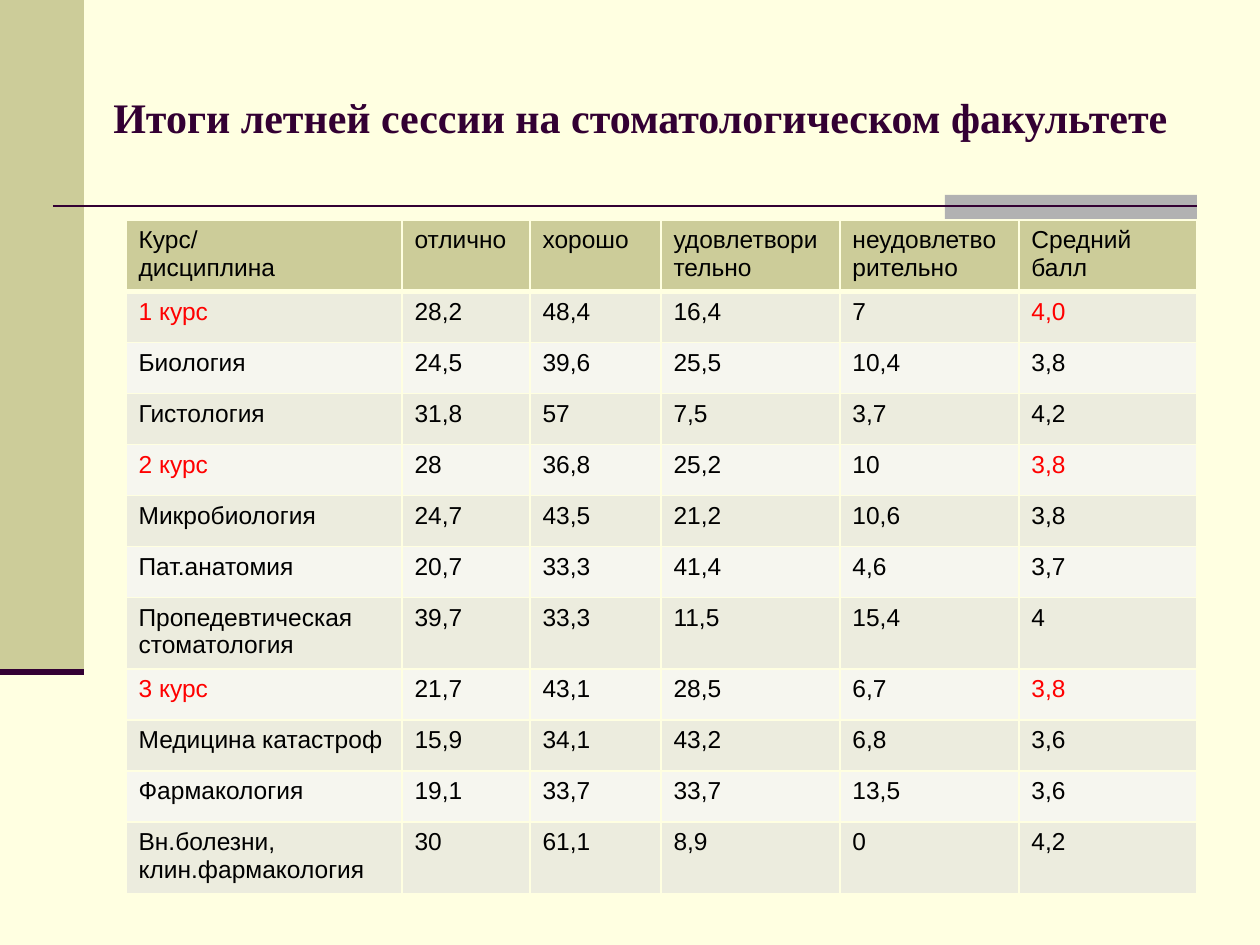
from dataclasses import dataclass

from lxml.etree import SubElement
from pptx import Presentation
from pptx.dml.color import RGBColor
from pptx.enum.shapes import MSO_CONNECTOR, MSO_SHAPE
from pptx.enum.text import MSO_ANCHOR, PP_ALIGN
from pptx.oxml.ns import qn
from pptx.util import Pt

SCALE = 914400 / 126  # EMU in one px


@dataclass(frozen=True)
class Theme:
    page: str = "FFFFE1"
    olive: str = "CCCC99"
    grey: str = "B2B2B2"
    plum: str = "330033"
    ink: str = "000000"
    red: str = "FF0000"
    bands: tuple = ("ECECDE", "F6F6EF")
    serif: str = "Times New Roman"
    sans: str = "Arial"
    title: int = 24
    body: int = 14


THEME = Theme()
TITLE = "Итоги летней сессии на стоматологическом факультете"
COLS = (276, 128, 131, 179, 179, 178)
ROW = 51
HEAD = ("Курс/\nдисциплина", "отлично", "хорошо", "удовлетворительно",
        "неудовлетворительно", "Средний балл")
DATA = (
    ("1 курс", "28,2", "48,4", "16,4", "7", "4,0"),
    ("Биология", "24,5", "39,6", "25,5", "10,4", "3,8"),
    ("Гистология", "31,8", "57", "7,5", "3,7", "4,2"),
    ("2 курс", "28", "36,8", "25,2", "10", "3,8"),
    ("Микробиология", "24,7", "43,5", "21,2", "10,6", "3,8"),
    ("Пат.анатомия", "20,7", "33,3", "41,4", "4,6", "3,7"),
    ("Пропедевтическая стоматология", "39,7", "33,3", "11,5", "15,4", "4"),
    ("3 курс", "21,7", "43,1", "28,5", "6,7", "3,8"),
    ("Медицина катастроф", "15,9", "34,1", "43,2", "6,8", "3,6"),
    ("Фармакология", "19,1", "33,7", "33,7", "13,5", "3,6"),
    ("Вн.болезни, клин.фармакология", "30", "61,1", "8,9", "0", "4,2"),
)


def px(n):
    return round(n * SCALE)


def rgb(tone):
    return RGBColor.from_string(tone)


def add_run(para, text, size, face, tone, bold=False):
    run = para.add_run()
    run.text = text
    run.font.size = Pt(size)
    run.font.name = face
    run.font.bold = bold
    run.font.color.rgb = rgb(tone)


def add_block(slide, box, tone):
    shape = slide.shapes.add_shape(MSO_SHAPE.RECTANGLE, *map(px, box))
    shape.shadow.inherit = False
    shape.fill.solid()
    shape.fill.fore_color.rgb = rgb(tone)
    shape.line.fill.background()


def add_rule(slide, left, top, width, weight):
    line = slide.shapes.add_connector(
        MSO_CONNECTOR.STRAIGHT, px(left), px(top), px(left + width), px(top))
    line.line.color.rgb = rgb(THEME.plum)
    line.line.width = Pt(weight)
    SubElement(line._element.spPr, qn("a:effectLst"))


def add_frame(slide, box):
    left, top, width, height = box
    # Side band, with a thick rule at its foot
    band = 84
    add_block(slide, (left, top, band, 672), THEME.olive)
    # Grey tab and the long rule across it
    edge = left + width - 63
    add_block(slide, (edge - 252, top + 195, 252, 25), THEME.grey)
    add_rule(slide, left + 53, top + 206, edge - left - 53, 1.5)
    add_rule(slide, left, top + 672, band, 3.5)


def add_title(slide, box):
    frame = slide.shapes.add_textbox(*map(px, box)).text_frame
    frame.word_wrap = True
    frame.vertical_anchor = MSO_ANCHOR.MIDDLE
    para = frame.paragraphs[0]
    para.alignment = PP_ALIGN.CENTER
    add_run(para, TITLE, THEME.title, THEME.serif, THEME.plum, True)


def add_edge(cell, side, weight):
    line = SubElement(cell._tc.get_or_add_tcPr(), qn("a:ln" + side),
                      w=str(Pt(weight)))
    fill = SubElement(line, qn("a:solidFill"))
    SubElement(fill, qn("a:srgbClr"), val=THEME.page)


def fill_cell(cell, text, tone, fill, top, base):
    # Edges come ahead of the fill in the cell XML
    for side, weight in (("L", 1), ("R", 1), ("T", top), ("B", base)):
        add_edge(cell, side, weight)
    cell.fill.solid()
    cell.fill.fore_color.rgb = rgb(fill)
    frame = cell.text_frame
    for i, part in enumerate(text.split("\n")):
        para = frame.add_paragraph() if i else frame.paragraphs[0]
        add_run(para, part, THEME.body, THEME.sans, tone)


def add_grades(slide, left, top):
    rows = (HEAD, *DATA)
    table = slide.shapes.add_table(
        len(rows), len(COLS), px(left), px(top),
        px(sum(COLS)), px(ROW * len(rows))).table
    for col, width in zip(table.columns, COLS):
        col.width = px(width)
    for r, row in enumerate(rows):
        table.rows[r].height = px(ROW)
        fill = THEME.bands[(r - 1) % 2] if r else THEME.olive
        for c, text in enumerate(row):
            # Year totals have a red name and mean
            mark = row[0].endswith(" курс") and c in (0, len(COLS) - 1)
            tone = THEME.red if mark else THEME.ink
            fill_cell(table.cell(r, c), text, tone, fill,
                      top=3 if r == 1 else 1, base=1 if r else 3)


def main():
    deck = Presentation()
    deck.slide_width, deck.slide_height = px(1260), px(945)
    slide = deck.slides.add_slide(deck.slide_layouts[6])
    slide.background.fill.solid()
    slide.background.fill.fore_color.rgb = rgb(THEME.page)
    add_frame(slide, (0, 0, 1260, 945))
    add_title(slide, (84, 38, 1113, 157))
    add_grades(slide, 126, 220)
    deck.save("out.pptx")


if __name__ == "__main__":
    main()
